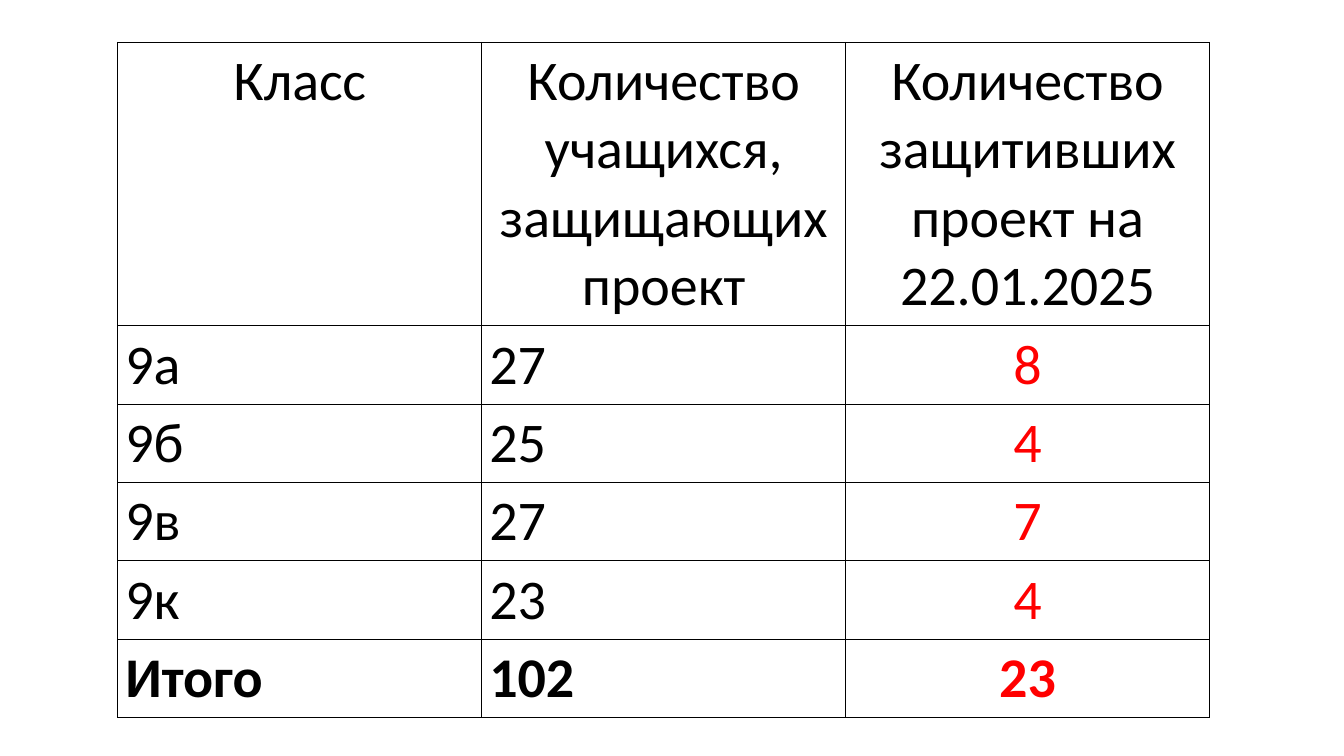
from lxml import etree
from pptx import Presentation
from pptx.dml.color import RGBColor
from pptx.enum.text import PP_ALIGN
from pptx.oxml.ns import qn
from pptx.util import Cm, Pt

LEFT, CENTER = PP_ALIGN.LEFT, PP_ALIGN.CENTER
BLACK = RGBColor(0x00, 0x00, 0x00)
WHITE = RGBColor(0xFF, 0xFF, 0xFF)
RED = RGBColor(0xFF, 0x00, 0x00)

HEADER_HEIGHT = Cm(7.14)
ROW_HEIGHT = Cm(1.97)
COLUMN_WIDTH = Cm(9.17)

CLASS_ROWS = [
    ("Класс", "Количество учащихся, защищающих проект",
     "Количество защитивших проект на 22.01.2025"),
    ("9а", "27", "8"),
    ("9б", "25", "4"),
    ("9в", "27", "7"),
    ("9к", "23", "4"),
    ("Итого", "102", "23"),
]


def set_borders(cell, color, width):
    properties = cell._tc.get_or_add_tcPr()
    for side in ("a:lnL", "a:lnR", "a:lnT", "a:lnB"):
        line = etree.SubElement(properties, qn(side), w=str(width))
        fill = etree.SubElement(line, qn("a:solidFill"))
        etree.SubElement(fill, qn("a:srgbClr"), val=str(color))


def fill_cell(cell, text, color, alignment, bold):
    set_borders(cell, BLACK, Pt(1))
    cell.fill.solid()
    cell.fill.fore_color.rgb = WHITE
    cell.margin_left = cell.margin_right = Cm(0.19)
    cell.text = text
    paragraph = cell.text_frame.paragraphs[0]
    paragraph.alignment = alignment
    paragraph.font.name = "Calibri"
    paragraph.font.size = Pt(40)
    paragraph.font.bold = bold
    paragraph.font.color.rgb = color


def add_class_table(slide, rows):
    row_count, column_count = len(rows), len(rows[0])
    height = HEADER_HEIGHT + ROW_HEIGHT * (row_count - 1)
    table = slide.shapes.add_table(
        row_count, column_count, Cm(2.97), Cm(1.07),
        COLUMN_WIDTH * column_count, height).table
    for column in table.columns:
        column.width = COLUMN_WIDTH

    for row_index, texts in enumerate(rows):
        is_header = row_index == 0
        is_total = row_index == row_count - 1
        table.rows[row_index].height = HEADER_HEIGHT if is_header else ROW_HEIGHT
        for column_index, text in enumerate(texts):
            is_defended = column_index == column_count - 1
            color = RED if is_defended and not is_header else BLACK
            alignment = CENTER if is_defended or is_header else LEFT
            fill_cell(table.cell(row_index, column_index), text,
                      color, alignment, is_total)


def main():
    presentation = Presentation()
    presentation.slide_width = Cm(33.87)
    presentation.slide_height = Cm(19.05)
    slide = presentation.slides.add_slide(presentation.slide_layouts[6])

    # Project defences by class, with totals
    add_class_table(slide, CLASS_ROWS)

    presentation.save("out.pptx")


if __name__ == "__main__":
    main()
